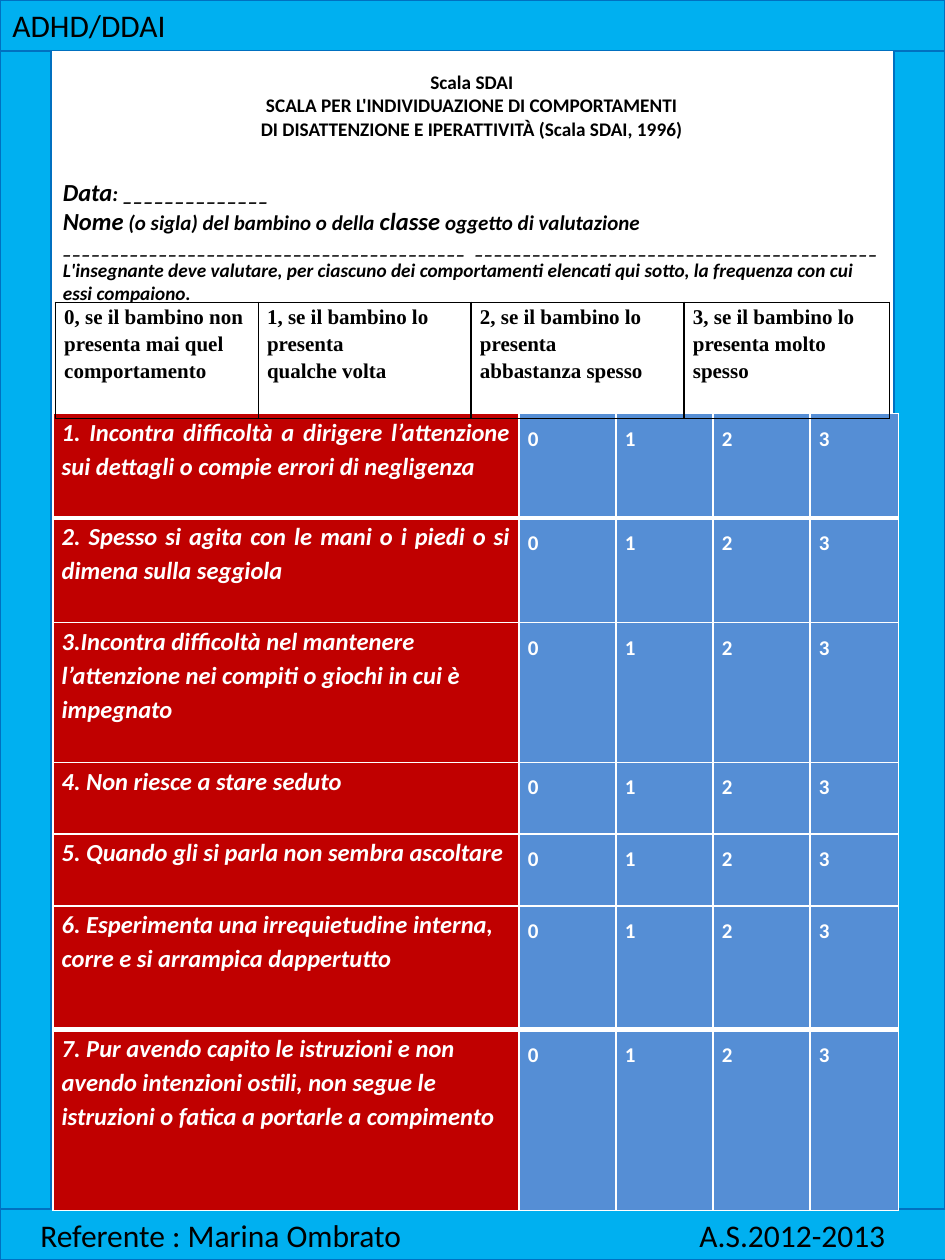
"""Build the SDAI rating scale sheet as a single portrait slide."""
from dataclasses import dataclass
from typing import Any

from lxml import etree
from pptx import Presentation
from pptx.dml.color import RGBColor
from pptx.enum.shapes import MSO_SHAPE
from pptx.enum.text import MSO_ANCHOR, PP_ALIGN
from pptx.oxml.ns import qn
from pptx.util import Inches, Pt

RECT = MSO_SHAPE.RECTANGLE
TOP, MIDDLE = MSO_ANCHOR.TOP, MSO_ANCHOR.MIDDLE
LEFT, CENTER, JUSTIFY = PP_ALIGN.LEFT, PP_ALIGN.CENTER, PP_ALIGN.JUSTIFY
SKY = RGBColor(0x00, 0xB0, 0xF0)
NAVY = RGBColor(0x00, 0x70, 0xC0)
RED = RGBColor(0xC0, 0x00, 0x00)
BLUE = RGBColor(0x55, 0x8E, 0xD5)
WHITE = RGBColor(0xFF, 0xFF, 0xFF)
BLACK = RGBColor(0x00, 0x00, 0x00)
SANS, SERIF = "Calibri", "Times New Roman"


@dataclass
class Run:
    text: str
    size: float
    bold: bool = True
    italic: bool = False
    name: str = SANS
    color: RGBColor = BLACK


@dataclass
class Para:
    runs: list[Run]
    align: PP_ALIGN = LEFT
    spacing: float = 1.0
    before: float = 0


@dataclass
class Band:
    left: float
    top: float
    width: float
    turn: int = 0
    text: str = ""
    inset: float = 0.1
    tab: float = 0


@dataclass
class Item:
    text: str
    height: float
    align: PP_ALIGN = LEFT


BANDS = [
    Band(0, 0, 7.5, text="ADHD/DDAI"),
    Band(0, 9.6, 7.51, text="Referente : Marina Ombrato\tA.S.2012-2013", inset=0.32, tab=5.23),
    Band(-4.39, 4.8, 9.19, 270),
    Band(2.7, 4.8, 9.19, 270),
]
TITLES = [
    "Scala SDAI",
    "SCALA PER L'INDIVIDUAZIONE DI COMPORTAMENTI",
    "DI DISATTENZIONE E IPERATTIVITÀ (Scala SDAI, 1996)",
]
FIELDS = [
    [("Data", 14), (": ______________", 12)],
    [("Nome", 14), (" (o sigla) del bambino o della ", 12), ("classe", 14),
     (" oggetto di valutazione", 12)],
    [("__________________________________________  __________________________________________", 11)],
    [("L'insegnante deve valutare, per ciascuno dei comportamenti elencati qui sotto, "
      "la frequenza con cui essi compaiono.", 11)],
]
LEGEND = [
    ["0, se il bambino non", "presenta mai quel", "comportamento"],
    ["1, se il bambino lo presenta", "qualche volta"],
    ["2, se il bambino lo presenta", "abbastanza spesso"],
    ["3, se il bambino lo", "presenta molto", "spesso"],
]
ITEMS = [
    Item("1. Incontra difficoltà a dirigere l’attenzione sui dettagli o compie errori di negligenza",
         0.83, JUSTIFY),
    Item("2. Spesso si agita con le mani o i piedi o si dimena sulla seggiola", 0.83, JUSTIFY),
    Item("3.Incontra difficoltà nel mantenere l’attenzione nei compiti o giochi in cui è impegnato", 1.11),
    Item("4. Non riesce a stare seduto", 0.57),
    Item("5. Quando gli si parla non sembra ascoltare", 0.57),
    Item("6. Esperimenta una irrequietudine interna, corre e si arrampica dappertutto", 0.98),
    Item("7. Pur avendo capito le istruzioni e non avendo intenzioni ostili, "
         "non segue le istruzioni o fatica a portarle a compimento", 1.44),
]
THICK = {1, len(ITEMS) - 1}


def apply(target: Any, values: dict[str, Any]) -> None:
    for key, value in values.items():
        setattr(target, key, value)


def write(frame: Any, paras: list[Para]) -> None:
    for spot, para in enumerate(paras):
        line = frame.add_paragraph() if spot else frame.paragraphs[0]
        apply(line, {"alignment": para.align, "line_spacing": para.spacing,
                     "space_before": Pt(para.before)})
        for run in para.runs:
            part = line.add_run()
            part.text = run.text
            apply(part.font, {"name": run.name, "size": Pt(run.size),
                              "bold": run.bold, "italic": run.italic})
            part.font.color.rgb = run.color


def draw_band(shapes: Any, band: Band) -> None:
    box = shapes.add_shape(RECT, Inches(band.left), Inches(band.top), Inches(band.width), Inches(0.4))
    apply(box, {"rotation": band.turn})
    box.shadow.inherit = False
    box.fill.solid()
    box.fill.fore_color.rgb = SKY
    box.line.color.rgb = NAVY
    box.line.width = Pt(0.75)
    if band.text:
        frame = box.text_frame
        apply(frame, {"word_wrap": True, "margin_left": Inches(band.inset), "vertical_anchor": MIDDLE})
        write(frame, [Para([Run(band.text, 18, bold=False)])])
        if band.tab:
            props = frame.paragraphs[0]._p.get_or_add_pPr()
            tabs = etree.SubElement(props, qn("a:tabLst"))
            etree.SubElement(tabs, qn("a:tab"), pos=str(Inches(band.tab)), algn="l")


def edge_cell(cell: Any, color: RGBColor, top: float, bottom: float) -> None:
    props = cell._tc.get_or_add_tcPr()
    sides = {"lnL": 1, "lnR": 1, "lnT": top, "lnB": bottom}
    for spot, (side, width) in enumerate(sides.items()):
        line = etree.Element(qn(f"a:{side}"), w=str(Pt(width)))
        fill = etree.SubElement(line, qn("a:solidFill"))
        etree.SubElement(fill, qn("a:srgbClr"), val=str(color))
        props.insert(spot, line)


def fill_cell(cell: Any, paras: list[Para], fill: RGBColor | None,
              edge: RGBColor, top: float = 1, bottom: float = 1) -> None:
    apply(cell, {"margin_left": Inches(0.07), "margin_right": Inches(0.07),
                 "margin_top": 0, "margin_bottom": 0, "vertical_anchor": TOP})
    if fill is None:
        cell.fill.background()
    else:
        cell.fill.solid()
        cell.fill.fore_color.rgb = fill
    edge_cell(cell, edge, top, bottom)
    write(cell.text_frame, paras)


def add_grid(shapes: Any, left: float, top: float, cols: list[float], rows: list[float]) -> Any:
    grid = shapes.add_table(len(rows), len(cols), Inches(left), Inches(top),
                            Inches(sum(cols)), Inches(sum(rows))).table
    apply(grid, {"first_row": False, "horz_banding": False})
    for col, width in zip(grid.columns, cols):
        col.width = Inches(width)
    for row, height in zip(grid.rows, rows):
        row.height = Inches(height)
    return grid


def draw_items(shapes: Any) -> None:
    grid = add_grid(shapes, 0.42, 3.28, [3.7, 0.77, 0.77, 0.77, 0.7], [item.height for item in ITEMS])
    for row, item in enumerate(ITEMS):
        top, bottom = (3 if edge in THICK else 1 for edge in (row, row + 1))
        label = Para([Run(item.text, 14, italic=True, color=WHITE)], item.align, 1.15)
        fill_cell(grid.cell(row, 0), [label], RED, WHITE, top, bottom)
        for score in range(4):
            mark = Para([Run(str(score), 12, color=WHITE)], spacing=1.5)
            fill_cell(grid.cell(row, score + 1), [mark], BLUE, WHITE, top, bottom)


def draw_intro(shapes: Any) -> None:
    frame = shapes.add_textbox(Inches(0.4), Inches(0.49), Inches(6.69), Inches(2.27)).text_frame
    apply(frame, {"word_wrap": True, "vertical_anchor": TOP, "margin_top": Inches(0.07)})
    paras = [Para([Run(text, 11)], CENTER) for text in TITLES]
    paras += [Para([Run(text, size, italic=True) for text, size in field]) for field in FIELDS]
    paras[len(TITLES)].before = 21
    write(frame, paras)


def draw_legend(shapes: Any) -> None:
    grid = add_grid(shapes, 0.44, 2.4, [1.61, 1.69, 1.69, 1.63], [0.92])
    for col, lines in enumerate(LEGEND):
        paras = [Para([Run(line, 12, name=SERIF)], spacing=1.15) for line in lines]
        fill_cell(grid.cell(0, col), paras, None, BLACK)


def main() -> None:
    deck = Presentation()
    apply(deck, {"slide_width": Inches(7.5), "slide_height": Inches(10)})
    shapes = deck.slides.add_slide(deck.slide_layouts[6]).shapes
    for band in BANDS:
        draw_band(shapes, band)
    draw_items(shapes)
    draw_intro(shapes)
    draw_legend(shapes)
    deck.save("out.pptx")


if __name__ == "__main__":
    main()
